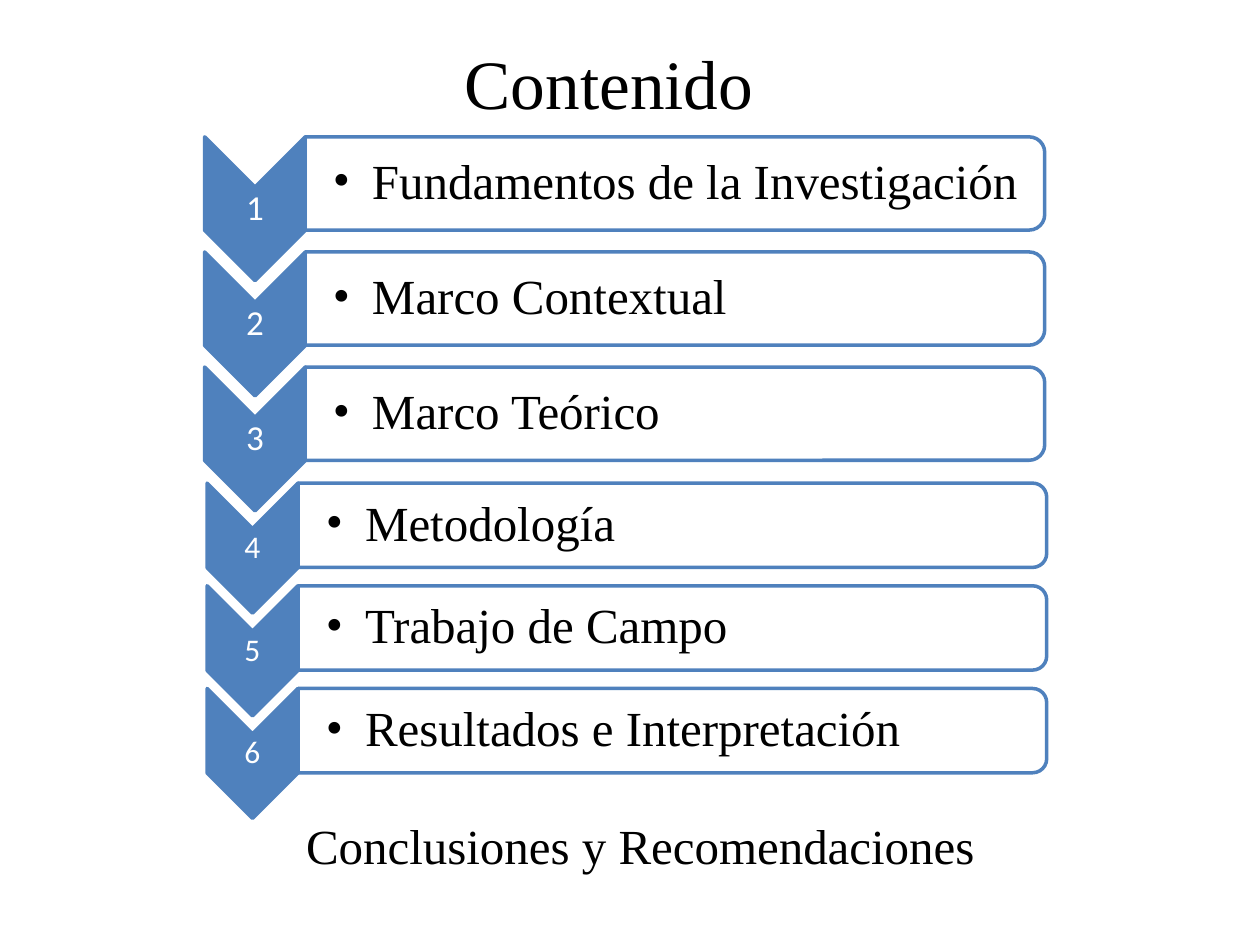
from dataclasses import dataclass

from lxml import etree
from pptx import Presentation
from pptx import util as u
from pptx.dml import color
from pptx.enum import shapes, text
from pptx.oxml import ns


@dataclass
class Theme:
    blue: str = "4F81BD"
    white: str = "FFFFFF"
    black: str = "000000"
    serif: str = "Times New Roman"
    sans: str = "Calibri"
    title: float = 39.6
    body: float = 28
    large: float = 20
    small: float = 18
    line: float = 2


@dataclass
class Band:
    top: float
    pitch: float
    mid: float
    wide: float
    tall: float
    left: float
    span: float
    high: float
    size: float
    items: tuple


class Deck:
    def __init__(self, theme):
        self.theme = theme
        self.file = Presentation()
        self.file.slide_width = u.Cm(25.4)
        self.file.slide_height = u.Cm(19.05)
        self.slide = self.file.slides.add_slide(self.file.slide_layouts[6])

    def label(self, home, words, box, size, face, hue, inset=None, align=None):
        frame = home.add_textbox(*map(u.Cm, box)).text_frame
        frame.word_wrap = True
        frame.text = words
        if inset:
            frame.vertical_anchor = text.MSO_ANCHOR.MIDDLE
            (frame.margin_left, frame.margin_top,
             frame.margin_right, frame.margin_bottom) = map(u.Cm, inset)
        para = frame.paragraphs[0]
        para.alignment = align
        font = para.runs[0].font
        font.size = u.Pt(size)
        font.name = face
        font.color.rgb = color.RGBColor.from_string(hue)
        return para

    def turned(self, home, kind, box, fill):
        left, top, wide, tall = box
        x = left + (wide - tall) / 2
        y = top + (tall - wide) / 2
        shape = home.add_shape(kind, *map(u.Cm, (x, y, tall, wide)))
        shape.rotation = 90
        shape.shadow.inherit = False
        shape.fill.solid()
        shape.fill.fore_color.rgb = color.RGBColor.from_string(fill)
        shape.line.color.rgb = color.RGBColor.from_string(self.theme.blue)
        shape.line.width = u.Pt(self.theme.line)
        return shape

    def fade(self, shape, share):
        hue = shape._element.spPr.find(ns.qn("a:solidFill"))[0]
        etree.SubElement(hue, ns.qn("a:alpha"), val=str(share * 1000))

    def bullet(self, para, indent):
        para.level = 1
        props = para._p.get_or_add_pPr()
        props.set("marL", str(u.Cm(indent)))
        props.set("indent", str(-u.Cm(indent)))
        etree.SubElement(props, ns.qn("a:buFont"), typeface=self.theme.serif)
        etree.SubElement(props, ns.qn("a:buChar"), char="•")

    def space(self, para, after):
        para.line_spacing = 0.9
        para.space_after = u.Pt(after)

    def row(self, home, band, top, mark, words):
        t = self.theme
        kinds = shapes.MSO_SHAPE
        edge = band.mid - band.wide / 2
        self.turned(home, kinds.CHEVRON, (edge, top, band.wide, band.tall), t.blue)
        box = (edge, top + band.wide / 2, band.wide, band.tall - band.wide)
        para = self.label(home, mark, box, band.size, t.sans, t.white,
                          (0.03,) * 4, text.PP_ALIGN.CENTER)
        self.space(para, band.size * 0.35)
        bar = self.turned(home, kinds.ROUND_2_SAME_RECTANGLE,
                          (band.left, top, band.span, band.high), t.white)
        self.fade(bar, 90)
        box = (band.left, top + 0.09, band.span - 0.09, band.high - 0.18)
        para = self.label(home, words, box, t.body, t.serif, t.black,
                          (0.56, 0.05, 0.05, 0.05))
        self.space(para, t.body * 0.15)
        self.bullet(para, 0.79)

    def list(self, band, first):
        home = self.slide.shapes.add_group_shape().shapes
        for step, words in enumerate(band.items):
            self.row(home, band, band.top + step * band.pitch,
                     str(first + step), words)


def main():
    theme = Theme()
    deck = Deck(theme)
    home = deck.slide.shapes
    deck.label(home, "Contenido", (1.27, 0.76, 22.02, 1.78), theme.title,
               theme.serif, theme.black, (0.25, 0.13, 0.25, 0.13),
               text.PP_ALIGN.CENTER)
    bands = (
        Band(top=2.76, pitch=2.32, mid=5.14, wide=2.03, tall=2.9,
             left=6.15, span=14.91, high=1.88, size=theme.large,
             items=("Fundamentos de la Investigación", "Marco Contextual",
                    "Marco Teórico")),
        Band(top=9.74, pitch=2.07, mid=5.09, wide=1.83, tall=2.62,
             left=6.01, span=15.09, high=1.7, size=theme.small,
             items=("Metodología", "Trabajo de Campo",
                    "Resultados e Interpretación")),
    )
    first = 1
    for band in bands:
        deck.list(band, first)
        first += len(band.items)
    deck.label(home, "Conclusiones y Recomendaciones",
               (5.92, 16.31, 15.24, 1.45), theme.body, theme.serif, theme.black)
    deck.file.save("out.pptx")


if __name__ == "__main__":
    main()
